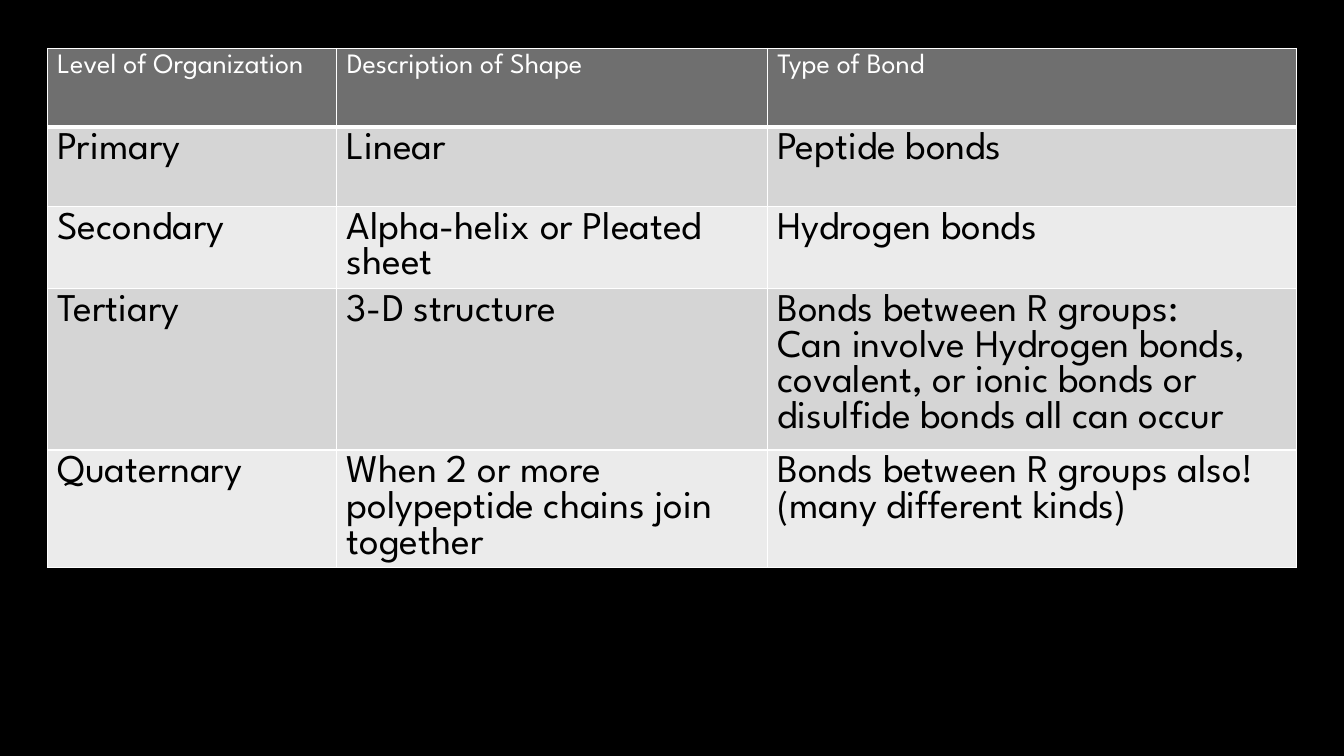
from lxml.etree import SubElement
from pptx import Presentation
from pptx.dml.color import RGBColor as Color
from pptx.oxml.ns import qn
from pptx.util import Inches, Pt

COLORS = {
    "background": "000000",
    "header": "6F6F6F",
    "odd_row": "D5D5D5",
    "even_row": "EBEBEB",
    "border": "FFFFFF",
    "header_text": "FFFFFF",
    "body_text": "000000",
}
FONT = "League Spartan"
TABLE_BOX = (0.47, 0.48, 12.39, 4.96)
COLUMN_WIDTHS = (2.87, 4.27, 5.25)
ROW_HEIGHTS = (0.78, 0.79, 0.79, 1.6, 1)
PROTEIN_LEVELS = (
    ("Level of Organization", "Description of Shape", "Type of Bond"),
    ("Primary", "Linear", "Peptide bonds"),
    ("Secondary", "Alpha-helix or Pleated sheet", "Hydrogen bonds"),
    (
        "Tertiary",
        "3-D structure",
        "Bonds between R groups:\nCan involve Hydrogen bonds, covalent, "
        "or ionic bonds or disulfide bonds all can occur",
    ),
    (
        "Quaternary",
        "When 2 or more polypeptide chains join together",
        "Bonds between R groups also! (many different kinds)",
    ),
)


def color(name):
    return Color.from_string(COLORS[name])


def add_borders(cell, bottom_width):
    properties = cell._tc.get_or_add_tcPr()
    for side, width in (("L", 1), ("R", 1), ("T", 1), ("B", bottom_width)):
        line = SubElement(properties, qn(f"a:ln{side}"), w=str(Pt(width)))
        fill = SubElement(line, qn("a:solidFill"))
        SubElement(fill, qn("a:srgbClr"), val=COLORS["border"])


def format_cell(cell, text, row_index):
    is_header = row_index == 0
    add_borders(cell, 3 if is_header else 1)
    band = "header" if is_header else ("even_row", "odd_row")[row_index % 2]
    cell.fill.solid()
    cell.fill.fore_color.rgb = color(band)
    cell.text = text
    for para in cell.text_frame.paragraphs:
        para.font.name = FONT
        para.font.size = Pt(20 if is_header else 28)
        para.font.bold = False
        para.font.color.rgb = color("header_text" if is_header else "body_text")


def add_level_table(page, box):
    frame = page.shapes.add_table(
        len(ROW_HEIGHTS), len(COLUMN_WIDTHS), *map(Inches, box)
    )
    table = frame.table
    for column, width in zip(table.columns, COLUMN_WIDTHS):
        column.width = Inches(width)
    for row_index, (row, height) in enumerate(zip(table.rows, ROW_HEIGHTS)):
        row.height = Inches(height)
        for cell, text in zip(row.cells, PROTEIN_LEVELS[row_index]):
            format_cell(cell, text, row_index)


def main():
    deck = Presentation()
    deck.slide_width = Inches(13.33)
    deck.slide_height = Inches(7.5)
    page = deck.slides.add_slide(deck.slide_layouts[6])
    page.background.fill.solid()
    page.background.fill.fore_color.rgb = color("background")
    add_level_table(page, TABLE_BOX)
    deck.save("out.pptx")


if __name__ == "__main__":
    main()
